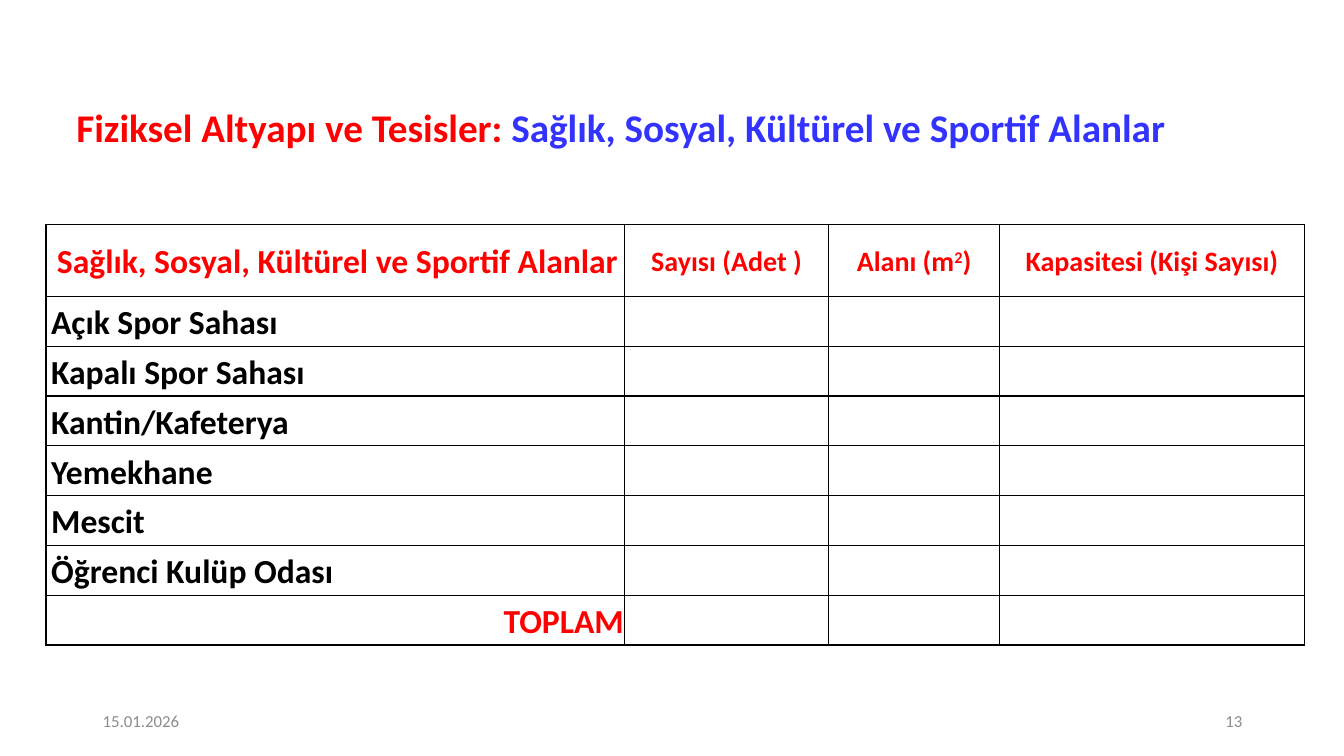
from lxml.etree import SubElement
from pptx import Presentation
from pptx.dml.color import RGBColor
from pptx.enum.text import MSO_ANCHOR, PP_ALIGN
from pptx.oxml.ns import qn
from pptx.util import Inches, Pt

SLIDE_WIDTH = Inches(13.33)
SLIDE_HEIGHT = Inches(7.5)
FONT = "Calibri"
RED = "FF0000"
BLUE = "3333FF"
BLACK = "000000"
GRAY = "8C8C8C"

COLUMN_SHARES = [43.06, 15.15, 12.75, 22.66]
HEADER_SHARE = 9.47
ROW_SHARE = 6.59
AREA_HEADING = "Sağlık, Sosyal, Kültürel ve Sportif Alanlar"
MEASURES = [
    [("Sayısı (Adet )", 0)],
    [("Alanı (m", 0), ("2", 30000), (")", 0)],
    [("Kapasitesi (Kişi Sayısı)", 0)],
]
FACILITIES = [
    "Açık Spor Sahası",
    "Kapalı Spor Sahası",
    "Kantin/Kafeterya",
    "Yemekhane",
    "Mescit",
    "Öğrenci Kulüp Odası",
]


def across(percent):
    return round(SLIDE_WIDTH * percent / 100)


def down(percent):
    return round(SLIDE_HEIGHT * percent / 100)


def color(value):
    return RGBColor.from_string(value)


def style_paragraph(paragraph, size, bold, alignment, spacing):
    paragraph.alignment = alignment
    paragraph.line_spacing = spacing
    paragraph.font.name = FONT
    paragraph.font.size = Pt(size)
    paragraph.font.bold = bold


def add_text(slide, left, top, width, height, runs, size,
             bold=False, alignment=PP_ALIGN.LEFT, spacing=1.0):
    shape = slide.shapes.add_textbox(across(left), down(top), across(width), down(height))
    frame = shape.text_frame
    frame.word_wrap = True
    frame.vertical_anchor = MSO_ANCHOR.MIDDLE
    paragraph = frame.paragraphs[0]
    style_paragraph(paragraph, size, bold, alignment, spacing)
    for text, text_color in runs:
        run = paragraph.add_run()
        run.text = text
        run.font.color.rgb = color(text_color)


def format_cell(cell):
    cell.margin_left = cell.margin_right = cell.margin_top = Inches(0.01)
    cell.margin_bottom = 0
    cell.vertical_anchor = MSO_ANCHOR.MIDDLE
    properties = cell._tc.get_or_add_tcPr()
    for side in ("a:lnL", "a:lnR", "a:lnT", "a:lnB"):
        line = SubElement(properties, qn(side), w=str(Pt(1)))
        fill = SubElement(line, qn("a:solidFill"))
        SubElement(fill, qn("a:srgbClr"), val=BLACK)
    cell.fill.background()


def write_cell(cell, runs, size, text_color, alignment, indent=0):
    paragraph = cell.text_frame.paragraphs[0]
    style_paragraph(paragraph, size, True, alignment, 1.07)
    paragraph.font.color.rgb = color(text_color)
    paragraph._p.get_or_add_pPr().set("marL", str(Inches(indent)))
    for text, baseline in runs:
        run = paragraph.add_run()
        run.text = text
        if baseline:
            run._r.get_or_add_rPr().set("baseline", str(baseline))


def add_facility_table(slide):
    row_shares = [HEADER_SHARE] + [ROW_SHARE] * (len(FACILITIES) + 1)
    frame = slide.shapes.add_table(
        len(row_shares), len(COLUMN_SHARES), across(3.43), down(29.73),
        across(sum(COLUMN_SHARES)), down(sum(row_shares)))
    table = frame.table
    table.first_row = False
    table.horz_banding = False
    for column, share in zip(table.columns, COLUMN_SHARES):
        column.width = across(share)
    for row, share in zip(table.rows, row_shares):
        row.height = down(share)
    for cell in table.iter_cells():
        format_cell(cell)

    write_cell(table.cell(0, 0), [(AREA_HEADING, 0)], 24, RED, PP_ALIGN.CENTER, 0.04)
    for column, runs in enumerate(MEASURES, start=1):
        write_cell(table.cell(0, column), runs, 20, RED, PP_ALIGN.CENTER)
    for row, facility in enumerate(FACILITIES, start=1):
        write_cell(table.cell(row, 0), [(facility, 0)], 24, BLACK, PP_ALIGN.LEFT, 0.04)
    write_cell(table.cell(len(row_shares) - 1, 0), [("TOPLAM", 0)], 24, RED, PP_ALIGN.RIGHT)


def main():
    presentation = Presentation()
    presentation.slide_width = SLIDE_WIDTH
    presentation.slide_height = SLIDE_HEIGHT
    slide = presentation.slides.add_slide(presentation.slide_layouts[6])

    title = [("Fiziksel Altyapı ve Tesisler: ", RED), (AREA_HEADING, BLUE)]
    add_text(slide, 4.58, 12.53, 83.2, 9.33, title, 28, True, PP_ALIGN.CENTER, 0.9)
    add_facility_table(slide)
    add_text(slide, 6.9, 92.67, 22.5, 5.33, [("15.01.2026", GRAY)], 12)
    add_text(slide, 70.67, 92.67, 22.5, 5.33, [("13", GRAY)], 12, alignment=PP_ALIGN.RIGHT)

    presentation.save("out.pptx")


if __name__ == "__main__":
    main()
